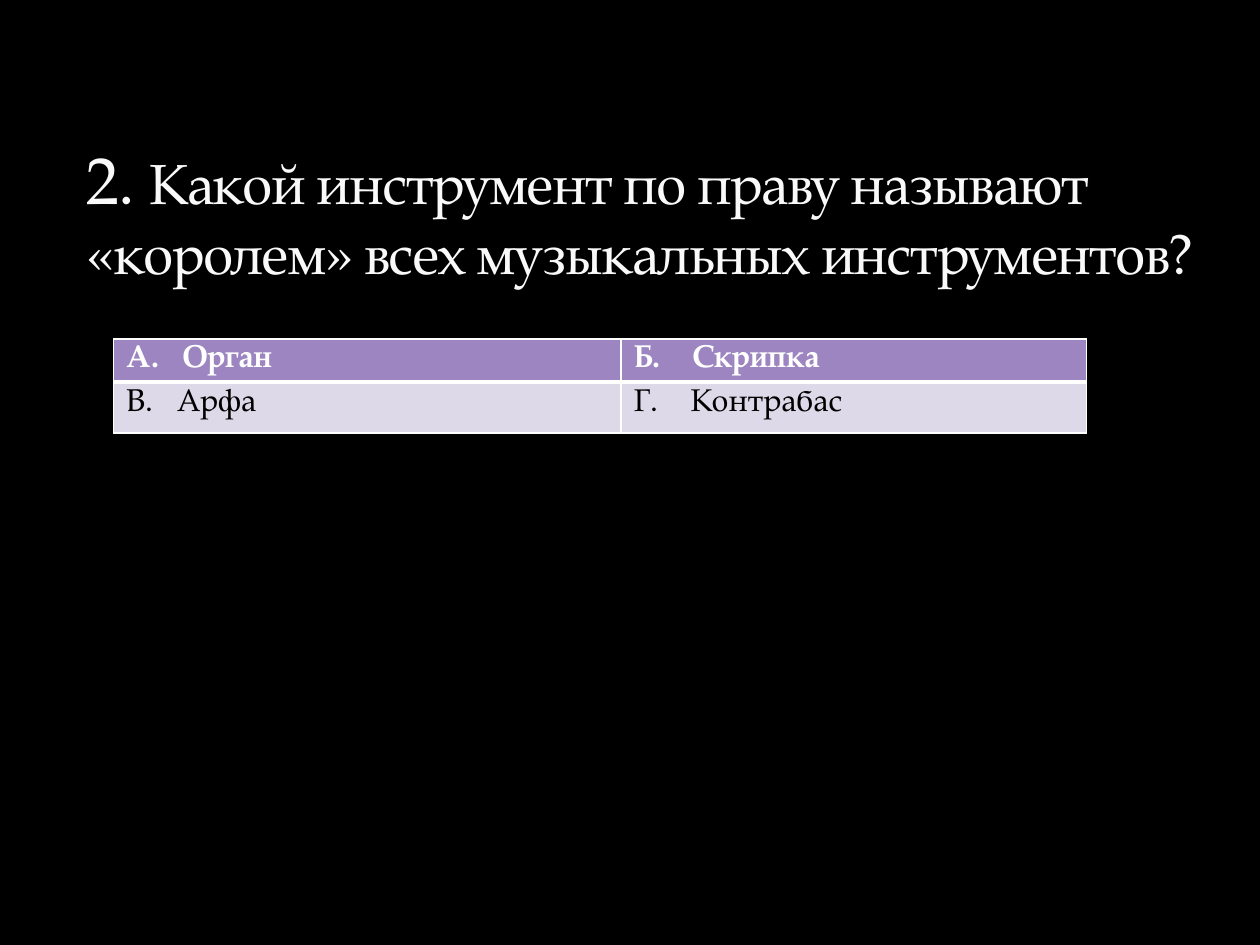
import pptx
import pptx.util
import pptx.dml.color
import pptx.enum.text
import pptx.oxml
import pptx.oxml.ns

Pt = pptx.util.Pt
RGB = pptx.dml.color.RGBColor.from_string
NS = pptx.oxml.ns.nsdecls("a")

# Content: (letter, answer, tab stop in points)
TITLE = [
    ("2. ", "number"),
    ("Какой инструмент по праву называют «королем» всех музыкальных инструментов?", "title"),
]
ANSWERS = [
    [("A.", "Орган", 32), ("Б.", "Скрипка", 33.5)],
    [("B.", "Арфа", 29), ("Г.", "Контрабас", 32.5)],
]
WIDTHS = [290, 266]
HEIGHTS = [24.6, 29.2]

THEME = {
    "font": "TeX Gyre Pagella",
    "back": "000000",
    "title": "F9F9F9",
    "edge": "3C4422",
    "rule": "FFFFFF",
    "rows": [("9C85C0", "FFFFFF", True), ("DED9E8", "000000", False)],
    "size": {"number": 37.8, "title": 32.4, "cell": 18},
}


def style(run, size, color, bold=False):
    font = run.font
    font.name = THEME["font"]
    font.size = Pt(THEME["size"][size])
    font.bold = bold
    font.color.rgb = RGB(color)


def outline(run):
    props = run.font._element
    props.set("spc", "-100")
    props.insert(0, pptx.oxml.parse_xml(
        f'<a:ln {NS} w="{Pt(0.25)}"><a:solidFill><a:srgbClr val="{THEME["edge"]}">'
        '<a:alpha val="25000"/></a:srgbClr></a:solidFill></a:ln>'))


def border(cell, widths):
    props = cell._tc.get_or_add_tcPr()
    for spot, (side, width) in enumerate(zip("LRTB", widths)):
        props.insert(spot, pptx.oxml.parse_xml(
            f'<a:ln{side} {NS} w="{Pt(width)}"><a:solidFill>'
            f'<a:srgbClr val="{THEME["rule"]}"/></a:solidFill></a:ln{side}>'))


def add_tab(para, stop):
    para._p.get_or_add_pPr().append(pptx.oxml.parse_xml(
        f'<a:tabLst {NS}><a:tab pos="{Pt(stop)}" algn="l"/></a:tabLst>'))


def add_title(slide):
    title = slide.shapes.title
    title.left, title.top, title.width, title.height = map(Pt, (42.5, 71.3, 648, 95.8))
    frame = title.text_frame
    frame.word_wrap = True
    frame.auto_size = pptx.enum.text.MSO_AUTO_SIZE.NONE
    frame.vertical_anchor = pptx.enum.text.MSO_ANCHOR.BOTTOM
    para = frame.paragraphs[0]
    para.alignment = pptx.enum.text.PP_ALIGN.LEFT
    para.line_spacing = 1.0
    for text, size in TITLE:
        run = para.add_run()
        run.text = text
        style(run, size, THEME["title"])
        outline(run)


def add_answers(slide):
    table = slide.shapes.add_table(
        len(HEIGHTS), len(WIDTHS), Pt(65), Pt(193.7),
        Pt(sum(WIDTHS)), Pt(sum(HEIGHTS))).table
    for col, width in zip(table.columns, WIDTHS):
        col.width = Pt(width)
    for r, (fill, ink, bold) in enumerate(THEME["rows"]):
        table.rows[r].height = Pt(HEIGHTS[r])
        for c, (letter, answer, stop) in enumerate(ANSWERS[r]):
            cell = table.cell(r, c)
            cell.vertical_anchor = pptx.enum.text.MSO_ANCHOR.TOP
            cell.margin_top, cell.margin_bottom = Pt(3.6), 0
            cell.fill.solid()
            cell.fill.fore_color.rgb = RGB(fill)
            # The line between header and body is heavy
            border(cell, (1, 1, 1, 3) if r == 0 else (1, 1, 3, 1))
            para = cell.text_frame.paragraphs[0]
            para.text = f"{letter}\t{answer}"
            add_tab(para, stop)
            style(para.runs[0], "cell", ink, bold)


def main():
    deck = pptx.Presentation()
    deck.slide_width, deck.slide_height = Pt(720), Pt(540)
    slide = deck.slides.add_slide(deck.slide_layouts[5])
    slide.background.fill.solid()
    slide.background.fill.fore_color.rgb = RGB(THEME["back"])
    add_answers(slide)
    add_title(slide)
    deck.save("out.pptx")


if __name__ == "__main__":
    main()
